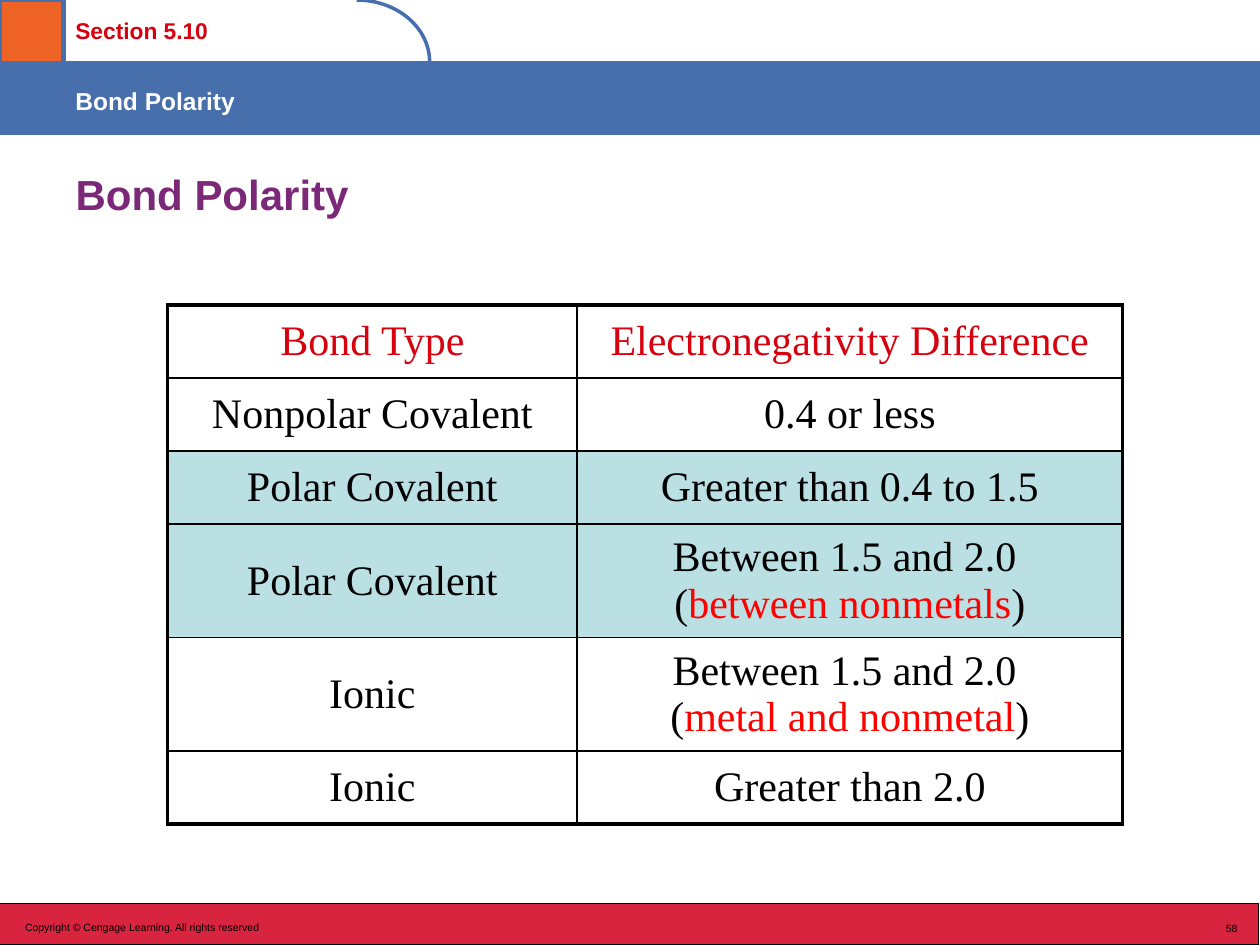
from math import cos, pi, sin

from lxml.etree import SubElement
from pptx import Presentation
from pptx.dml.color import RGBColor
from pptx.enum.shapes import MSO_SHAPE
from pptx.enum.text import MSO_ANCHOR, PP_ALIGN
from pptx.oxml.ns import qn
from pptx.util import Inches, Pt

BLACK = RGBColor(0x00, 0x00, 0x00)
WHITE = RGBColor(0xFF, 0xFF, 0xFF)
BLUE = RGBColor(0x47, 0x6F, 0xAC)
ORANGE = RGBColor(0xF0, 0x63, 0x26)
GREEN = RGBColor(0x48, 0xA4, 0x59)
CRIMSON = RGBColor(0xD9, 0x24, 0x40)
HEADING_RED = RGBColor(0xD6, 0x00, 0x0E)
NOTE_RED = RGBColor(0xFF, 0x00, 0x00)
PURPLE = RGBColor(0x7C, 0x28, 0x78)
PALE_TEAL = RGBColor(0xBB, 0xE0, 0xE3)

SECTION_FONT = {"name": "Arial", "size": Pt(13), "bold": True}
BANNER_FONT = {"name": "Arial", "size": Pt(14), "bold": True}
TITLE_FONT = {"name": "Arial", "size": Pt(24), "bold": True}
FOOTER_FONT = {"name": "Arial", "size": Pt(6), "bold": False}
TABLE_FONT = {"name": "Times New Roman", "size": Pt(24), "bold": False}

COLUMN_WIDTHS = [3.25, 4.33]
BOND_ROWS = [
    ("Bond Type", "Electronegativity Difference", None, 0.58),
    ("Nonpolar Covalent", "0.4 or less", None, 0.58),
    ("Polar Covalent", "Greater than 0.4 to 1.5", None, 0.58),
    ("Polar Covalent", "Between 1.5 and 2.0 ", "between nonmetals", 0.9),
    ("Ionic", "Between 1.5 and 2.0 ", "metal and nonmetal", 0.9),
    ("Ionic", "Greater than 2.0", None, 0.58),
]


def apply_format(target, values):
    for attribute, value in values.items():
        setattr(target, attribute, value)


def add_run(paragraph, wording, font_format, color):
    run = paragraph.add_run()
    run.text = wording
    apply_format(run.font, font_format)
    run.font.color.rgb = color


def add_block(slide, left, top, width, height, fill, line, weight):
    block = slide.shapes.add_shape(
        MSO_SHAPE.RECTANGLE, Inches(left), Inches(top), Inches(width), Inches(height)
    )
    block.shadow.inherit = False
    block.fill.solid()
    block.fill.fore_color.rgb = fill
    block.line.color.rgb = line
    block.line.width = Pt(weight)


def add_label(slide, wording, place, font_format, color, inset, align=PP_ALIGN.LEFT):
    frame = slide.shapes.add_textbox(*map(Inches, place)).text_frame
    apply_format(frame, {"word_wrap": True, "margin_top": Inches(inset)})
    frame.paragraphs[0].alignment = align
    add_run(frame.paragraphs[0], wording, font_format, color)


def add_tab_curve(slide, left, width, height, steps=24):
    angles = [pi / 2 * step / steps for step in range(steps + 1)]
    points = [
        (Inches(left + width * sin(angle)), Inches(height * (1 - cos(angle))))
        for angle in angles
    ]
    builder = slide.shapes.build_freeform(*points[0])
    builder.add_line_segments(points[1:], close=False)
    curve = builder.convert_to_shape()
    curve.shadow.inherit = False
    curve.fill.background()
    curve.line.color.rgb = BLUE
    curve.line.width = Pt(2)


def set_title(slide, wording):
    title = slide.shapes.title
    apply_format(title, {
        "left": Inches(0.5), "top": Inches(1.25),
        "width": Inches(9), "height": Inches(0.58),
    })
    title.text_frame.vertical_anchor = MSO_ANCHOR.MIDDLE
    paragraph = title.text_frame.paragraphs[0]
    paragraph.alignment = PP_ALIGN.LEFT
    add_run(paragraph, wording, TITLE_FONT, PURPLE)


def set_borders(cell, weights):
    properties = cell._tc.get_or_add_tcPr()
    for side, weight in weights.items():
        border = SubElement(properties, qn(f"a:ln{side}"), w=str(Pt(weight)))
        fill = SubElement(border, qn("a:solidFill"))
        SubElement(fill, qn("a:srgbClr"), val=str(BLACK))


def fill_cell(cell, wording, note, color, shaded):
    cell.vertical_anchor = MSO_ANCHOR.MIDDLE
    if shaded:
        cell.fill.solid()
        cell.fill.fore_color.rgb = PALE_TEAL
    else:
        cell.fill.background()
    first_line = cell.text_frame.paragraphs[0]
    first_line.alignment = PP_ALIGN.CENTER
    add_run(first_line, wording, TABLE_FONT, color)
    if note:
        note_line = cell.text_frame.add_paragraph()
        note_line.alignment = PP_ALIGN.CENTER
        for part, part_color in (("(", BLACK), (note, NOTE_RED), (")", BLACK)):
            add_run(note_line, part, TABLE_FONT, part_color)


def add_bond_table(slide):
    last_row, last_column = len(BOND_ROWS) - 1, len(COLUMN_WIDTHS) - 1
    table = slide.shapes.add_table(
        len(BOND_ROWS), len(COLUMN_WIDTHS), Inches(1.33), Inches(2.42),
        Inches(sum(COLUMN_WIDTHS)), Inches(sum(row[-1] for row in BOND_ROWS)),
    ).table
    apply_format(table, {"first_row": False, "horz_banding": False})
    for column, width in zip(table.columns, COLUMN_WIDTHS):
        column.width = Inches(width)
    for r, (bond_type, difference, note, height) in enumerate(BOND_ROWS):
        table.rows[r].height = Inches(height)
        color = HEADING_RED if r == 0 else BLACK
        for c, (wording, remark) in enumerate(((bond_type, None), (difference, note))):
            cell = table.cell(r, c)
            outer = {"L": c == 0, "R": c == last_column, "T": r == 0, "B": r == last_row}
            set_borders(cell, {s: 2.25 if edge else 1 for s, edge in outer.items()})
            fill_cell(cell, wording, remark, color, bond_type == "Polar Covalent")


def main():
    presentation = Presentation()
    presentation.slide_width = Inches(10)
    presentation.slide_height = Inches(7.5)
    slide = presentation.slides.add_slide(presentation.slide_layouts[5])

    add_block(slide, -0.01, 7.17, 10, 0.33, CRIMSON, BLACK, 0.75)
    add_block(slide, 0, 0.49, 10, 0.58, BLUE, BLUE, 0.75)
    add_label(slide, "Section 5.10", (0.5, 0.03, 2.85, 0.47),
              SECTION_FONT, HEADING_RED, 0.1)
    add_label(slide, "Bond Polarity", (0.5, 0.58, 9.5, 0.5), BANNER_FONT, WHITE, 0.1)
    add_block(slide, 0.01, 0, 0.5, 0.5, GREEN, BLUE, 2)
    add_tab_curve(slide, 2.83, 0.58, 0.49)
    add_block(slide, 0, 0, 0.5, 0.5, ORANGE, BLUE, 2)
    add_label(slide, "Copyright © Cengage Learning. All rights reserved",
              (0.1, 7.24, 6.42, 0.25), FOOTER_FONT, BLACK, 0.07)
    add_label(slide, "58", (7.25, 7.25, 2.67, 0.25),
              FOOTER_FONT, BLACK, 0.07, PP_ALIGN.RIGHT)
    set_title(slide, "Bond Polarity")
    add_bond_table(slide)

    presentation.save("out.pptx")


if __name__ == "__main__":
    main()
